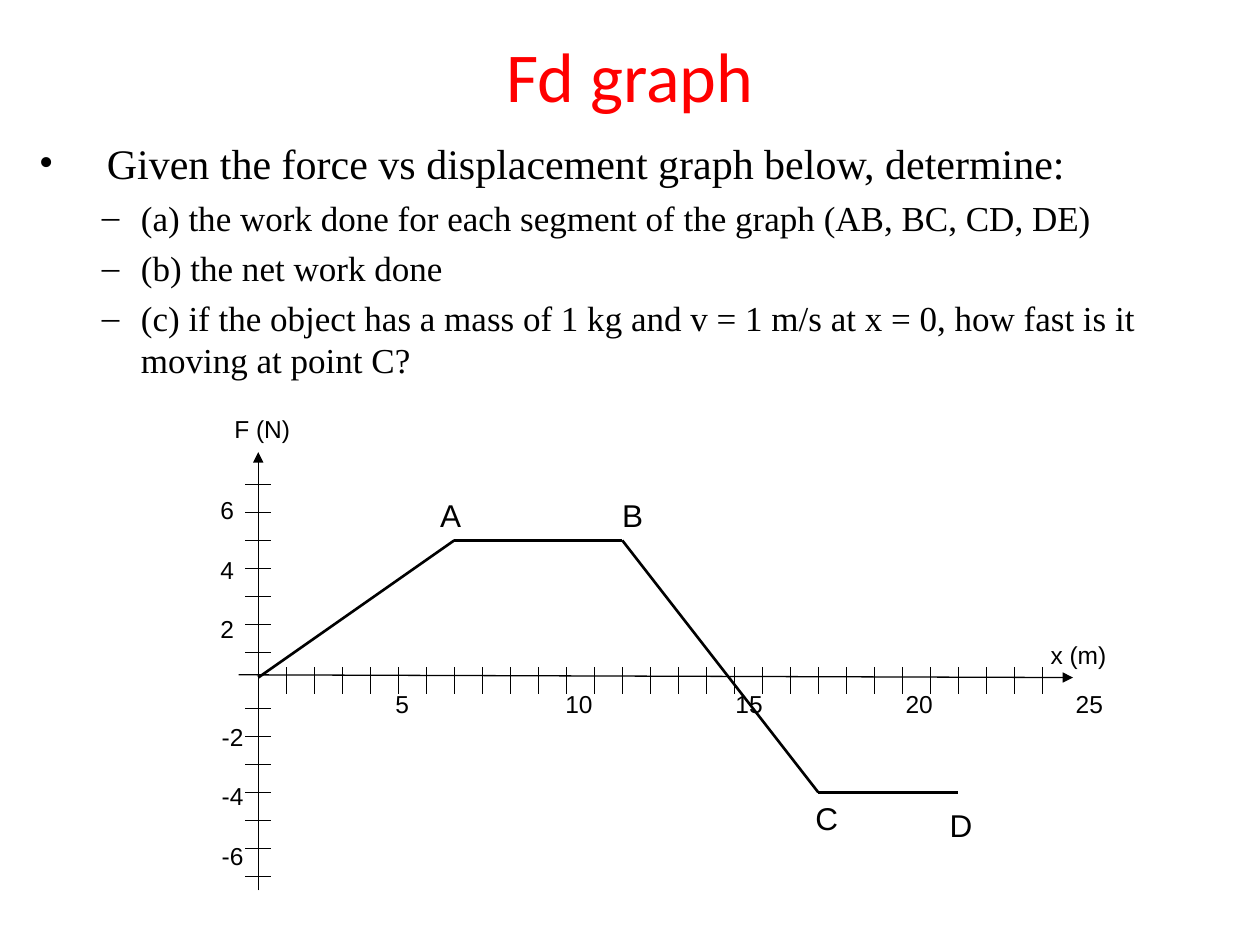
from lxml import etree
from pptx import Presentation, util as u
from pptx.dml.color import RGBColor
from pptx.enum import shapes, text
from pptx.oxml.ns import qn

BLACK = RGBColor(0, 0, 0)
RED = RGBColor(255, 0, 0)

# Graph grid: one column is 1 m, one row is 1 N, measured from the origin
ORIGIN_X, ORIGIN_Y = 2.05, 5.4
STEP = 2 / 9
TICK = 0.47

deck = Presentation()
deck.slide_width, deck.slide_height = u.Inches(10), u.Inches(7.5)
page = deck.slides.add_slide(deck.slide_layouts[6])


def add_line(start, end, width=0.75, arrow=False):
    """Join two (column, row) points of the graph grid."""
    ends = [u.Inches(value) for col, row in (start, end)
            for value in (ORIGIN_X + col * STEP, ORIGIN_Y - row * STEP)]
    line = page.shapes.add_connector(shapes.MSO_CONNECTOR.STRAIGHT, *ends)
    line.line.color.rgb = BLACK
    line.line.width = u.Pt(width)
    if arrow:
        etree.SubElement(line.line._get_or_add_ln(), qn("a:tailEnd"), type="triangle")
    etree.SubElement(line._element.spPr, qn("a:effectLst"))


def add_text(left, top, width, height, lines, size, font="Arial", color=BLACK, gap=0):
    box = page.shapes.add_textbox(*map(u.Inches, (left, top, width, height)))
    frame = box.text_frame
    frame.word_wrap = True
    for index, line in enumerate(lines):
        para = frame.paragraphs[0] if index == 0 else frame.add_paragraph()
        para.text = line
        para.font.size, para.font.name = u.Pt(size), font
        para.font.color.rgb = color
        if index:
            para.space_before = u.Pt(gap)
    return frame


title = add_text(0.5, -0.03, 9, 1.25, ["Fd graph"], 40, "Calibri", RED)
title.vertical_anchor = text.MSO_ANCHOR.MIDDLE
title.paragraphs[0].alignment = text.PP_ALIGN.CENTER

# Question with its three parts: bullet, left indent, size
question = add_text(0.21, 0.99, 9.51, 2.25, [
    "Given the force vs displacement graph below, determine:",
    "(a) the work done for each segment of the graph (AB, BC, CD, DE)",
    "(b) the net work done",
    "(c) if the object has a mass of 1 kg and v = 1 m/s at x = 0, "
    "how fast is it moving at point C?",
], 20, "Times New Roman", gap=4.8)
question.margin_top = u.Inches(0.1)
question.paragraphs[0].font.size = u.Pt(24)
for index, para in enumerate(question.paragraphs):
    bullet, left, hang = ("–", 0.81, 0.31) if index else ("•", 0.54, 0.54)
    props = para._p.get_or_add_pPr()
    props.set("marL", str(u.Inches(left)))
    props.set("indent", str(-u.Inches(hang)))
    props.set("lvl", str(min(index, 1)))
    etree.SubElement(props, qn("a:buFont"), typeface="Times New Roman")
    etree.SubElement(props, qn("a:buChar"), char=bullet)
    # Keep the run defaults after the bullet, as the schema orders them
    props.append(props.find(qn("a:defRPr")))

# Axes and tick marks
add_line((0, -7.5), (0, 8.15), arrow=True)
add_line((-0.7, 0.2), (29.1, 0.1), arrow=True)
for row in range(-7, 8):
    if row:
        add_line((-TICK, row), (TICK, row))
for col in range(1, 29):
    add_line((col, -TICK), (col, TICK))

# Force curve through A, B, C and D
curve = [(0, 0.1), (7, 5), (13, 5), (20, -4), (25, -4)]
for start, end in zip(curve, curve[1:]):
    add_line(start, end, width=1.5)

# Labels: column, row, width, height, lines, size
labels = [
    (-1.3, 9.75, 0.98, 0.34, ["F (N)"], 14),
    (27.85, 1.65, 0.98, 0.34, ["x (m)"], 14),
    (-1.8, 6.85, 0.4, 1.28, ["6", "4", "2"], 14),
    (-1.75, -1.25, 0.4, 1.28, ["-2", "-4", "-6"], 14),
    (6.05, 6.8, 0.98, 0.4, ["A"], 18),
    (12.55, 6.8, 0.98, 0.4, ["B"], 18),
    (19.45, -4, 0.98, 0.4, ["C"], 18),
    (24.25, -4.25, 0.98, 0.4, ["D"], 18),
]
for col, row, width, height, lines, size in labels:
    add_text(ORIGIN_X + col * STEP, ORIGIN_Y - row * STEP, width, height,
             lines, size, gap=17.3)

# Numbers of the x axis, set on equal tab stops
numbers = add_text(ORIGIN_X + 4.45 * STEP, ORIGIN_Y + 0.1 * STEP, 6.8, 0.34,
                   ["5\t10\t15\t20\t25"], 14)
props = numbers.paragraphs[0]._p.get_or_add_pPr()
tabs = etree.Element(qn("a:tabLst"))
for stop in range(1, 5):
    etree.SubElement(tabs, qn("a:tab"), pos=str(u.Inches(1.35 * stop)), algn="l")
props.insert(0, tabs)

deck.save("out.pptx")
